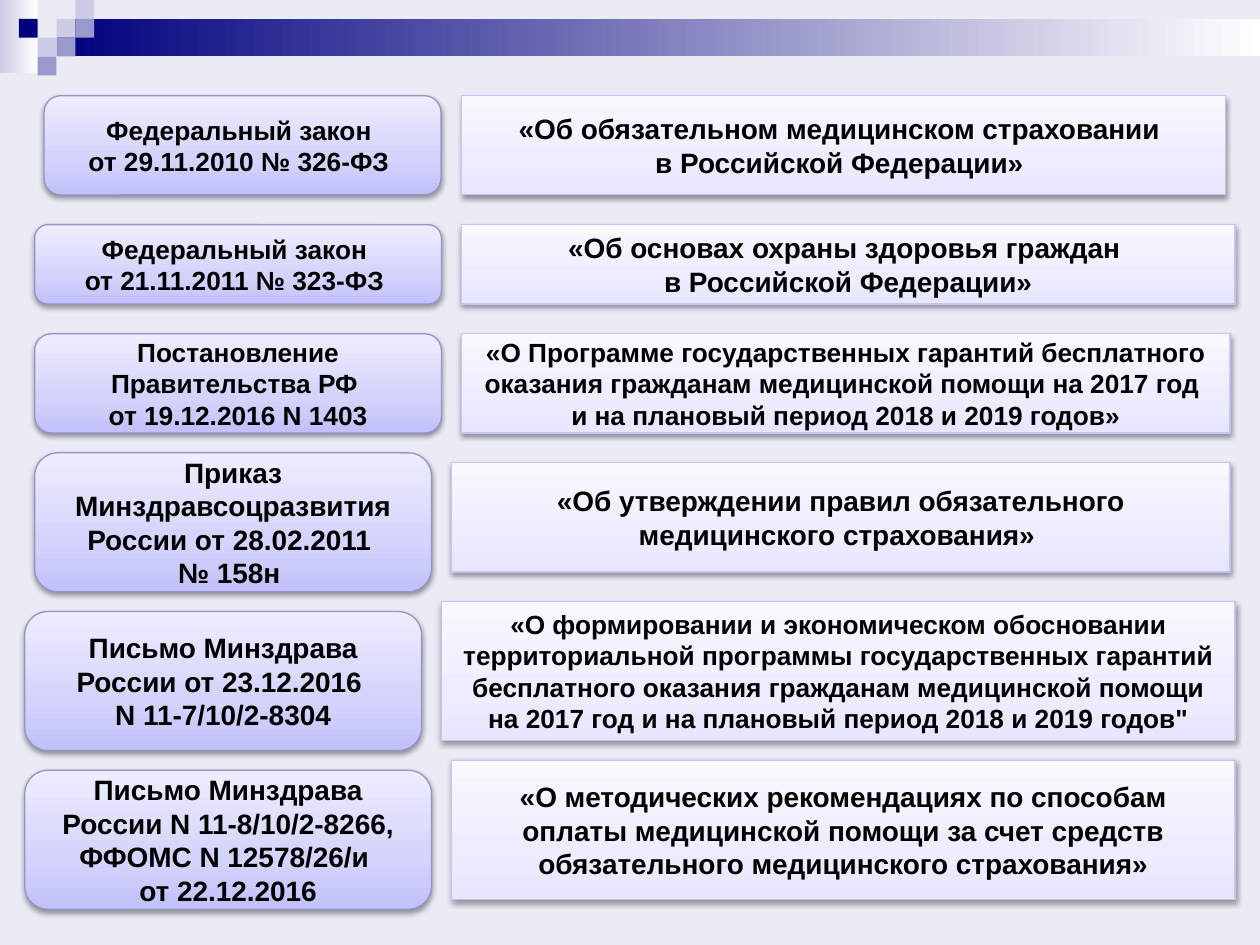
from copy import deepcopy
from dataclasses import dataclass

from lxml.etree import SubElement
from pptx import Presentation
from pptx.dml.color import RGBColor
from pptx.enum.shapes import MSO_SHAPE as Preset
from pptx.enum.text import MSO_ANCHOR as Anchor, PP_ALIGN as Align
from pptx.oxml.ns import qn
from pptx.util import Cm, Pt


@dataclass(frozen=True)
class Theme:
    """Colours, gradients and type sizes of the slide."""
    font: str = "Arial"
    ink: str = "000000"
    background: str = "EBEBF5"
    white: str = "FFFFFF"
    navy: str = "00007D"
    lilac: str = "CCCCE6"
    violet: str = "9999CC"
    act_fill: tuple = ((0, "C1C1FB"), (0.35, "D3D3FB"), (1, "EDEDFF"))
    act_line: str = "9494C9"
    subject_fill: tuple = ((0, "E6E6FF"), (0.35, "EDEDFF"), (1, "F8F8FF"))
    subject_line: str = "C4C4FB"
    small: int = 15
    large: int = 16


THEME = Theme()
SLIDE_WIDTH, SLIDE_HEIGHT = 25.4, 19.05
CELL = 0.38

# Each box is left, top, width, height in centimetres.
ROWS = [
    ((0.89, 1.93, 8, 2), THEME.small,
     "Федеральный закон \nот 29.11.2010 № 326-ФЗ ",
     (9.3, 1.93, 15.4, 2), THEME.large,
     "«Об обязательном медицинском страховании \vв Российской Федерации» "),
    ((0.7, 4.53, 8.2, 1.6), THEME.small,
     "Федеральный закон \nот 21.11.2011 № 323-ФЗ ",
     (9.3, 4.53, 15.6, 1.6), THEME.large,
     "«Об основах охраны здоровья граждан \vв Российской Федерации»"),
    ((0.7, 6.73, 8.2, 2), THEME.small,
     "Постановление Правительства РФ \vот 19.12.2016 N 1403",
     (9.3, 6.73, 15.5, 2), THEME.small,
     "«О Программе государственных гарантий бесплатного оказания гражданам "
     "медицинской помощи на 2017 год \vи на плановый период 2018 и 2019 годов»"),
    ((0.7, 9.13, 8, 2.8), THEME.large,
     "Приказ Минздравсоцразвития России от 28.02.2011 \v№ 158н ",
     (9.1, 9.33, 15.7, 2.2), THEME.large,
     "«Об утверждении правил обязательного медицинского страхования» "),
    ((0.5, 12.33, 8, 2.8), THEME.large,
     "Письмо Минздрава России от 23.12.2016 \vN 11-7/10/2-8304",
     (8.9, 12.13, 16, 2.8), THEME.small,
     "«О формировании и экономическом обосновании территориальной программы "
     "государственных гарантий бесплатного оказания гражданам медицинской "
     "помощи на 2017 год и на плановый период 2018 и 2019 годов\""),
    ((0.5, 15.53, 8.2, 2.8), THEME.large,
     "Письмо Минздрава России N 11-8/10/2-8266, ФФОМС N 12578/26/и "
     "\vот 22.12.2016",
     (9.1, 15.33, 15.8, 2.8), THEME.large,
     "«О методических рекомендациях по способам оплаты медицинской помощи "
     "за счет средств обязательного медицинского страхования»"),
]


def colour(value):
    """Turn a hex string into a colour."""
    return RGBColor.from_string(value)


def add_block(slide, box, preset=Preset.RECTANGLE):
    """Add a shape without line or shadow at a box given in centimetres."""
    block = slide.shapes.add_shape(preset, *map(Cm, box))
    block.shadow.inherit = False
    block.line.fill.background()
    return block


def fill_solid(block, value):
    """Fill a block with one colour."""
    block.fill.solid()
    block.fill.fore_color.rgb = colour(value)


def fill_gradient(block, stops, angle):
    """Fill a block with a linear gradient of any number of stops."""
    block.fill.gradient()
    block.fill.gradient_angle = angle
    stop_list = block._element.spPr.find(".//" + qn("a:gsLst"))
    for _ in stops[2:]:
        stop_list.append(deepcopy(stop_list[0]))
    for stop, (position, value) in zip(block.fill.gradient_stops, stops):
        stop.position = position
        stop.color.rgb = colour(value)


def add_soft_shadow(block):
    """Give a block a soft shadow that falls straight down."""
    effects = block._element.spPr.find(qn("a:effectLst"))
    shadow = SubElement(effects, qn("a:outerShdw"), blurRad="40000",
                        dist="20000", dir="5400000", rotWithShape="0")
    black = SubElement(shadow, qn("a:srgbClr"), val=THEME.ink)
    SubElement(black, qn("a:alpha"), val="38000")


def write_text(block, text, size):
    """Write bold centred text into a block."""
    frame = block.text_frame
    frame.word_wrap = True
    frame.vertical_anchor = Anchor.MIDDLE
    frame.text = text
    for paragraph in frame.paragraphs:
        paragraph.alignment = Align.CENTER
        for run in paragraph.runs:
            run.font.name = THEME.font
            run.font.size = Pt(size)
            run.font.bold = True
            run.font.color.rgb = colour(THEME.ink)


def add_card(slide, box, preset, stops, outline, text, size):
    """Add a shaded card with an outline and text."""
    card = add_block(slide, box, preset)
    fill_gradient(card, stops, 90)
    card.line.color.rgb = colour(outline)
    card.line.width = Pt(0.75)
    add_soft_shadow(card)
    write_text(card, text, size)


def add_header(slide, box):
    """Add the fading band and the mosaic of squares inside a box."""
    left, top, width, height = box
    edge = add_block(slide, (left, top, 2 * CELL, height))
    fill_gradient(edge, ((0, THEME.lilac), (1, THEME.white)), 0)
    band = add_block(slide, (left + 3 * CELL, top + CELL,
                             width - 3 * CELL, 2 * CELL))
    fill_gradient(band, ((0, THEME.navy), (1, THEME.white)), 0)
    mosaic = {
        THEME.lilac: ((3, 1), (4, 0), (2, 2)),
        THEME.violet: ((4, 1), (3, 2), (2, 3)),
        THEME.navy: ((1, 1),),
    }
    for value, places in mosaic.items():
        for column, row in places:
            square = add_block(slide, (left + column * CELL, top + row * CELL,
                                       CELL, CELL))
            fill_solid(square, value)


def add_law_row(slide, act_box, act_size, act, subject_box, subject_size, subject):
    """Add a legal act and its subject side by side."""
    add_card(slide, act_box, Preset.ROUNDED_RECTANGLE, THEME.act_fill,
             THEME.act_line, act, act_size)
    add_card(slide, subject_box, Preset.RECTANGLE, THEME.subject_fill,
             THEME.subject_line, subject, subject_size)


def main():
    """Build the slide of legal acts and save it."""
    deck = Presentation()
    deck.slide_width, deck.slide_height = Cm(SLIDE_WIDTH), Cm(SLIDE_HEIGHT)
    slide = deck.slides.add_slide(deck.slide_layouts[6])
    slide.background.fill.solid()
    slide.background.fill.fore_color.rgb = colour(THEME.background)
    add_header(slide, (0, 0, SLIDE_WIDTH, 1.47))
    for row in ROWS:
        add_law_row(slide, *row)
    deck.save("out.pptx")


if __name__ == "__main__":
    main()
